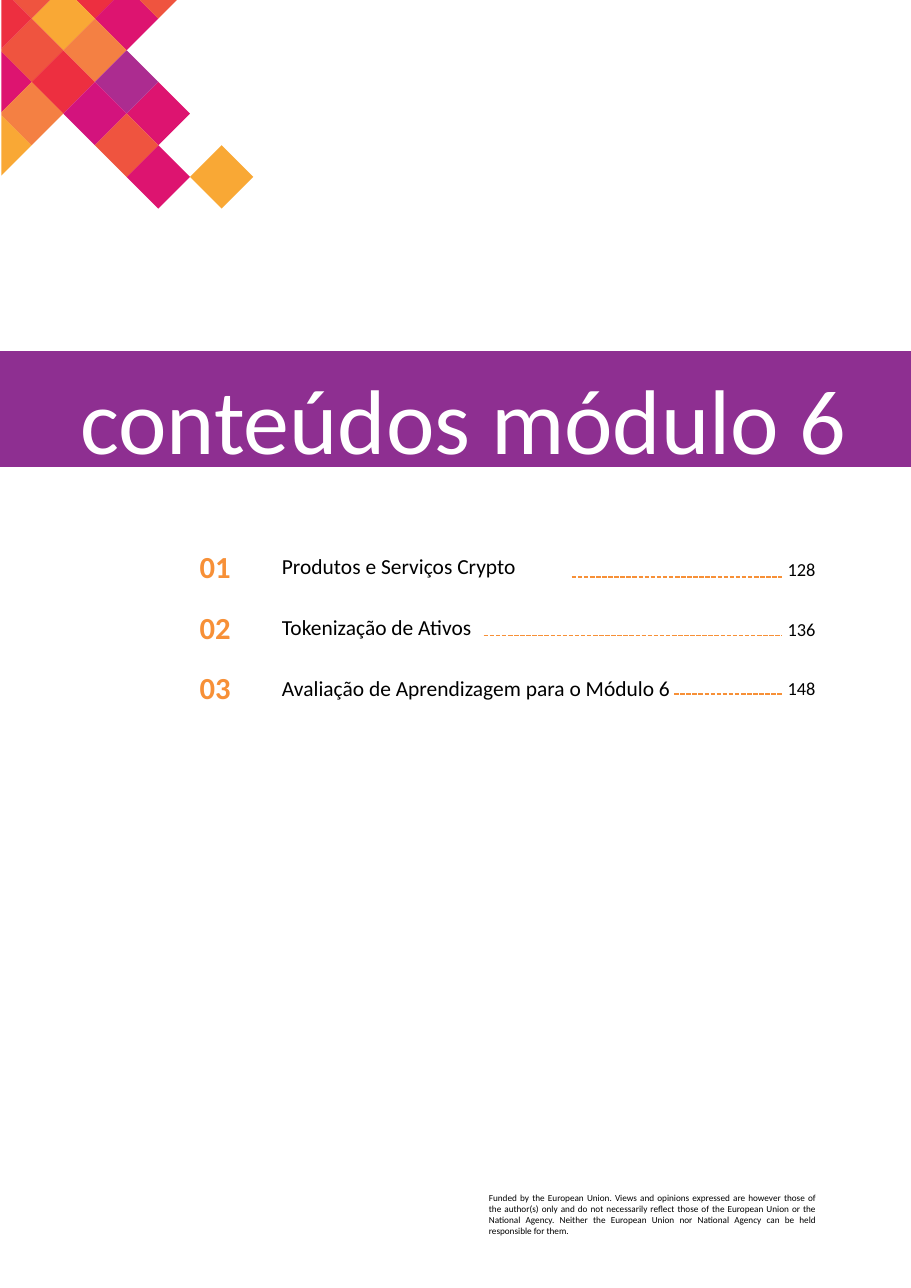
from dataclasses import dataclass

from lxml.etree import SubElement
from pptx import Presentation
from pptx.dml.color import RGBColor
from pptx.enum.dml import MSO_LINE
from pptx.enum.shapes import MSO_CONNECTOR, MSO_SHAPE
from pptx.enum.text import MSO_ANCHOR as Anchor, MSO_AUTO_SIZE, PP_ALIGN as Align
from pptx.oxml.ns import qn
from pptx.shapes.autoshape import Shape
from pptx.slide import Slide
from pptx.util import Cm, Pt

PURPLE, ORANGE, BLACK, WHITE = "8E2F91", "F79037", "000000", "FFFFFF"
PAGE_WIDTH, PAGE_HEIGHT = 21.0, 29.7
TILE_HALF = 0.73
MOSAIC_TOP = 0.43
MOSAIC_EDGE = 0.03

Point = tuple[float, float]


@dataclass
class Tile:
    column: int
    row: int
    color: str


@dataclass
class Entry:
    number: str
    label: str
    page_number: str
    leader_start: float


@dataclass
class TextStyle:
    size: float
    color: str = BLACK
    bold: bool = False
    align: Align = Align.LEFT
    anchor: Anchor = Anchor.MIDDLE


TILES = [
    Tile(3, -1, "ED2F40"), Tile(4, 0, "DD1470"), Tile(5, -1, "EF543F"),
    Tile(2, 0, "F9A835"), Tile(1, 1, "EF543F"), Tile(2, 2, "ED2F40"),
    Tile(3, 1, "F48043"), Tile(0, 2, "DD1470"), Tile(0, 4, "F9A835"),
    Tile(1, 3, "F48043"), Tile(7, 5, "F9A835"), Tile(5, 5, "DD1470"),
    Tile(5, 3, "DD1470"), Tile(4, 2, "AC2C90"), Tile(3, 3, "D3137D"),
    Tile(4, 4, "EF543F"), Tile(1, -1, "EF543F"), Tile(0, 0, "ED2F40"),
]
ENTRIES = [
    Entry("01", "Produtos e Serviços Crypto", "128", 13.18),
    Entry("02", "Tokenização de Ativos", "136", 11.15),
    Entry("03", "Avaliação de Aprendizagem para o Módulo 6", "148", 15.54),
]
FUNDING = (
    "Funded by the European Union. Views and opinions expressed are however those of "
    "the author(s) only and do not necessarily reflect those of the European Union or "
    "the National Agency. Neither the European Union nor National Agency can be held "
    "responsible for them."
)
NUMBER_STYLE = TextStyle(20, ORANGE, bold=True, align=Align.CENTER)
LABEL_STYLE = TextStyle(14)
PAGE_STYLE = TextStyle(12, align=Align.RIGHT)
TITLE_STYLE = TextStyle(60, WHITE, anchor=Anchor.TOP)
FUNDING_STYLE = TextStyle(6, align=Align.JUSTIFY, anchor=Anchor.TOP)


def rgb(color: str) -> RGBColor:
    return RGBColor.from_string(color)


def paint(shape: Shape, color: str) -> None:
    shape.shadow.inherit = False
    shape.fill.solid()
    shape.fill.fore_color.rgb = rgb(color)
    shape.line.fill.background()


def write(box: Shape, text: str, style: TextStyle) -> None:
    frame = box.text_frame
    frame.text = text
    frame.word_wrap = True
    frame.auto_size = MSO_AUTO_SIZE.NONE
    frame.vertical_anchor = style.anchor
    para = frame.paragraphs[0]
    para.alignment = style.align
    for span in para.runs:
        span.font.name = "Calibri"
        span.font.size = Pt(style.size)
        span.font.bold = style.bold
        span.font.color.rgb = rgb(style.color)


def add_text(page: Slide, left: float, top: float, width: float, height: float,
             text: str, style: TextStyle) -> None:
    box = page.shapes.add_textbox(Cm(left), Cm(top), Cm(width), Cm(height))
    write(box, text, style)


def clip(points: list[Point], axis: int, limit: float) -> list[Point]:
    kept = []
    for start, end in zip(points, points[1:] + points[:1]):
        if start[axis] >= limit:
            kept.append(start)
        if (start[axis] - limit) * (end[axis] - limit) < 0:
            ratio = (limit - start[axis]) / (end[axis] - start[axis])
            kept.append((start[0] + ratio * (end[0] - start[0]),
                         start[1] + ratio * (end[1] - start[1])))
    return kept


def add_tile(page: Slide, tile: Tile) -> None:
    x = tile.column * TILE_HALF
    y = MOSAIC_TOP + tile.row * TILE_HALF
    diamond = [(x - TILE_HALF, y), (x, y - TILE_HALF),
               (x + TILE_HALF, y), (x, y + TILE_HALF)]
    visible = clip(clip(diamond, 0, MOSAIC_EDGE), 1, 0)
    corners = [(Cm(across), Cm(down)) for across, down in visible]
    builder = page.shapes.build_freeform(*corners[0])
    builder.add_line_segments(corners[1:], close=True)
    paint(builder.convert_to_shape(), tile.color)


def add_leader(page: Slide, start: float, end: float, y: float) -> None:
    leader = page.shapes.add_connector(
        MSO_CONNECTOR.STRAIGHT, Cm(start), Cm(y), Cm(end), Cm(y))
    leader.line.color.rgb = rgb(ORANGE)
    leader.line.width = Pt(1)
    leader.line.dash_style = MSO_LINE.SQUARE_DOT
    SubElement(leader.element.spPr, qn("a:effectLst"))


def add_entry(page: Slide, index: int, entry: Entry) -> None:
    top = 12.57 + 1.4 * index
    add_text(page, 4.06, top, 1.8, 0.97, entry.number, NUMBER_STYLE)
    add_text(page, 6.25, top, 11.05, 0.97, entry.label, LABEL_STYLE)
    add_text(page, 17.78, 12.65 + 1.37 * index, 1.27, 0.97, entry.page_number, PAGE_STYLE)
    add_leader(page, entry.leader_start, 18.03, 13.3 + 1.35 * index)


def add_title_band(page: Slide) -> None:
    band = page.shapes.add_shape(
        MSO_SHAPE.RECTANGLE, Cm(0), Cm(8.1), Cm(PAGE_WIDTH), Cm(2.67))
    paint(band, PURPLE)
    title = page.shapes.title
    title.left, title.top = Cm(1.6), Cm(8.23)
    title.width, title.height = Cm(18.29), Cm(2.69)
    write(title, "conteúdos módulo 6", TITLE_STYLE)
    band.element.addnext(title.element)


def main() -> None:
    deck = Presentation()
    deck.slide_width, deck.slide_height = Cm(PAGE_WIDTH), Cm(PAGE_HEIGHT)
    page = deck.slides.add_slide(deck.slide_layouts[5])
    add_title_band(page)
    for tile in TILES:
        add_tile(page, tile)
    for index, entry in enumerate(ENTRIES):
        add_entry(page, index, entry)
    add_text(page, 11.02, 27.36, 8.03, 1.27, FUNDING, FUNDING_STYLE)
    deck.save("out.pptx")


if __name__ == "__main__":
    main()
